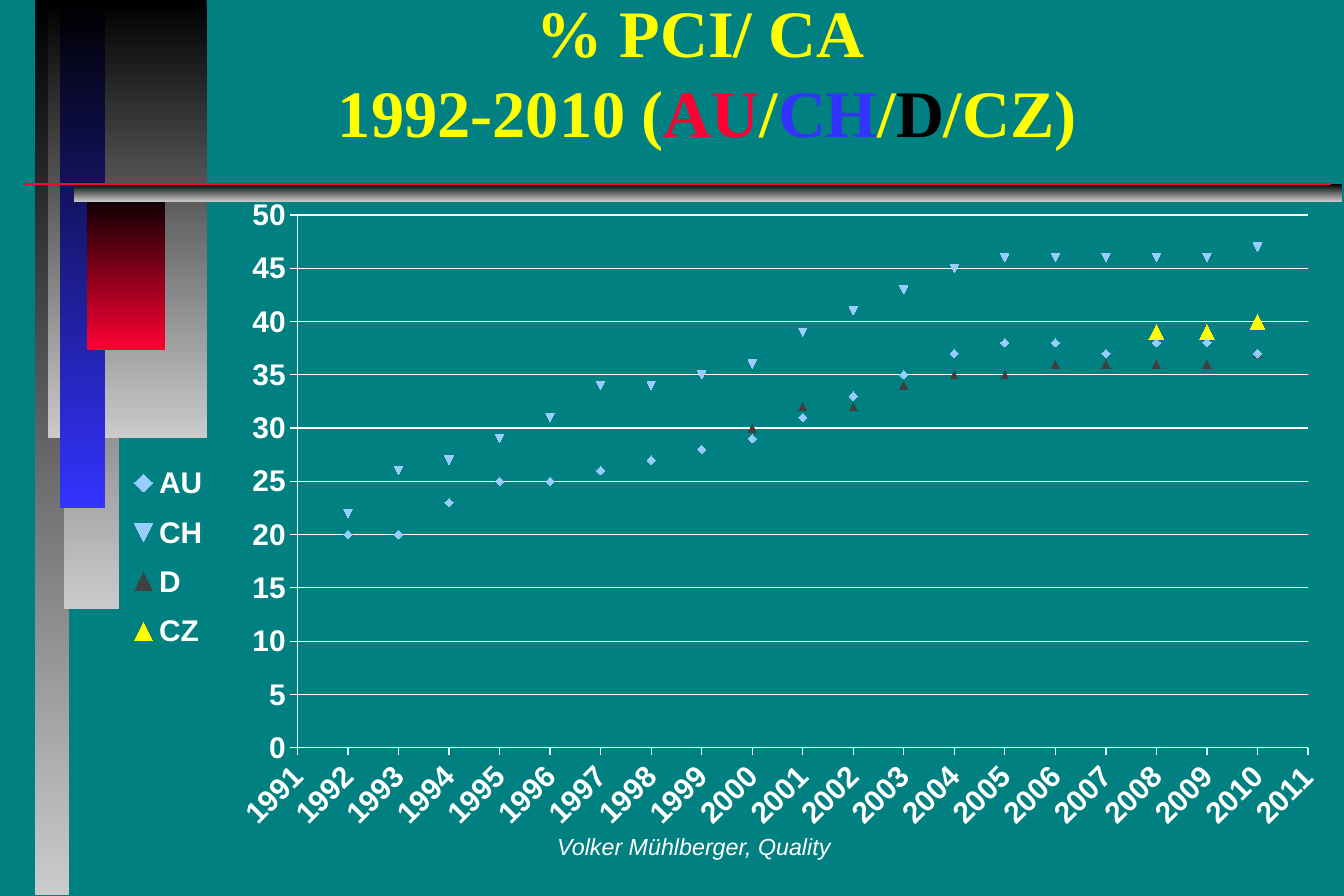
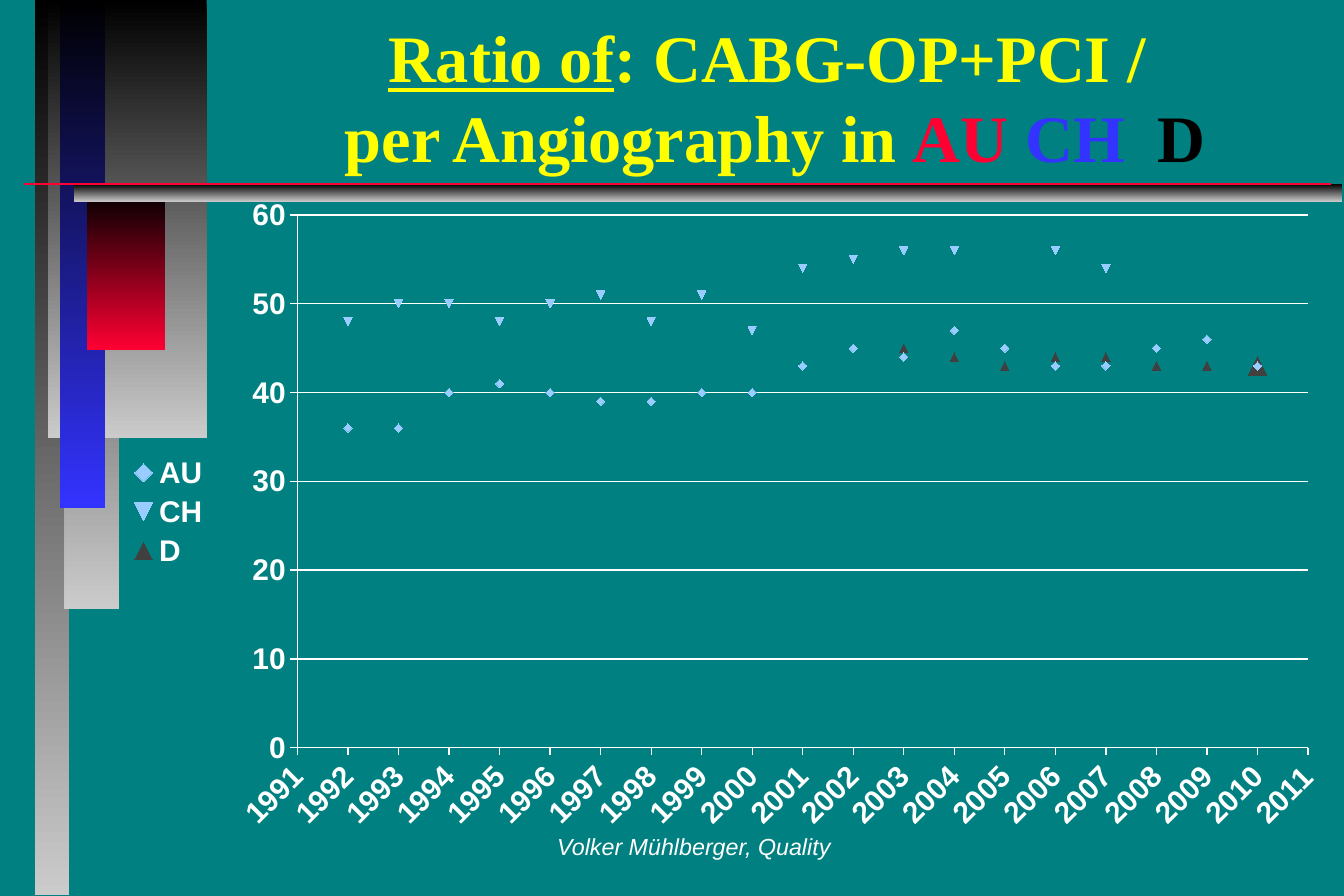
from dataclasses import dataclass

from lxml.etree import SubElement
from pptx import Presentation
from pptx.chart.data import XyChartData
from pptx.dml.color import RGBColor
from pptx.enum.chart import (XL_CHART_TYPE, XL_LEGEND_POSITION,
                             XL_MARKER_STYLE, XL_TICK_MARK)
from pptx.enum.shapes import MSO_CONNECTOR, MSO_SHAPE
from pptx.enum.text import MSO_ANCHOR, PP_ALIGN
from pptx.oxml import parse_xml
from pptx.oxml.ns import nsdecls, qn
from pptx.util import Inches, Pt


@dataclass(frozen=True)
class Theme:
    back: str = "008080"
    dark: str = "000000"
    pale: str = "CBCBCB"
    blue: str = "3333FF"
    red: str = "FF0033"
    gold: str = "FFFF00"
    white: str = "FFFFFF"
    sky: str = "99CCFF"
    gray: str = "404040"
    serif: str = "Times New Roman"
    sans: str = "Arial"
    head: int = 40
    body: int = 18
    foot: int = 14


T = Theme()


def tint(code):
    return RGBColor.from_string(code)


def put(item, **vals):
    for name, val in vals.items():
        setattr(item, name, val)


def clear():
    return parse_xml(f"<c:spPr {nsdecls('c', 'a')}><a:noFill/>"
                     "<a:ln><a:noFill/></a:ln></c:spPr>")


class Deck:
    # Left, top, width, height and end colour of each band, back to front
    BANDS = [
        (0.29, 0, 0.29, 7.49, T.pale),
        (0.54, 0, 0.46, 5.1, T.pale),
        (0.4, 0, 1.33, 3.67, T.pale),
        (0.5, 0, 0.38, 4.25, T.blue),
        (0.73, 1.6, 0.65, 1.33, T.red),
        (0.62, 1.54, 10.61, 0.15, T.pale),
    ]
    CHART = (0.98, 1.55, 10.27, 5.51)

    def __init__(self):
        self.prs = Presentation()
        put(self.prs, slide_width=Inches(11.25), slide_height=Inches(7.5))
        self.slide = None

    def start(self):
        """Add a slide with the shared bands, rule and footer."""
        self.slide = self.prs.slides.add_slide(self.prs.slide_layouts[6])
        fill = self.slide.background.fill
        fill.solid()
        fill.fore_color.rgb = tint(T.back)
        for *box, code in self.BANDS:
            self.band(box, code)
        self.rule(0.2, 11.14, 1.54)
        self.text((4.03, 6.83, 3.56, 0.5),
                  [[("Volker Mühlberger, Quality", T.white, {})]],
                  MSO_ANCHOR.MIDDLE, False,
                  dict(name=T.sans, size=Pt(T.foot), italic=True))

    def band(self, box, code):
        band = self.slide.shapes.add_shape(MSO_SHAPE.RECTANGLE,
                                           *map(Inches, box))
        band.shadow.inherit = False
        band.line.fill.background()
        band.fill.gradient()
        band.fill.gradient_angle = 270
        stops = zip(band.fill.gradient_stops, (0, 1), (T.dark, code))
        for stop, spot, shade in stops:
            stop.position = spot
            stop.color.rgb = tint(shade)

    def rule(self, left, right, top):
        rule = self.slide.shapes.add_connector(
            MSO_CONNECTOR.STRAIGHT, *map(Inches, (left, top, right, top)))
        rule.line.width = Pt(1)
        rule.line.color.rgb = tint(T.red)
        SubElement(rule._element.spPr, qn("a:effectLst"))

    def text(self, box, lines, anchor, wrap, style):
        """Write one centred paragraph; lines hold (words, colour, extras)."""
        frame = self.slide.shapes.add_textbox(*map(Inches, box)).text_frame
        put(frame, word_wrap=wrap, vertical_anchor=anchor)
        para = frame.paragraphs[0]
        para.alignment = PP_ALIGN.CENTER
        for row, line in enumerate(lines):
            if row:
                para.add_line_break()
            for words, code, more in line:
                run = para.add_run()
                run.text = words
                put(run.font, **style, **more)
                run.font.color.rgb = tint(code)

    def title(self, box, lines):
        self.text(box, lines, MSO_ANCHOR.BOTTOM, True,
                  dict(name=T.serif, size=Pt(T.head), bold=True))

    def place(self, parent, index, box, **kind):
        """Fix a chart part at a box in inches from the chart's corner."""
        for old in parent.findall(qn("c:layout")):
            parent.remove(old)
        node = parse_xml(
            f"<c:layout {nsdecls('c')}><c:manualLayout/></c:layout>")
        wide, high = self.CHART[2:]
        sizes = zip("xywh", box, (wide, high, wide, high))
        spots = {tag: part / whole for tag, part, whole in sizes}
        for tag, val in {**kind, "xMode": "edge", "yMode": "edge",
                         **spots}.items():
            SubElement(node[0], qn(f"c:{tag}")).set("val", str(val))
        parent.insert(index, node)

    def chart(self, rows, top, step, deep, large=None):
        """Plot rows of (name, values from 1992, style, size, colours)."""
        data = XyChartData(number_format="0")
        for name, vals, *_ in rows:
            line = data.add_series(name)
            for year, val in enumerate(vals, 1992):
                line.add_data_point(year, val)
        chart = self.slide.shapes.add_chart(
            XL_CHART_TYPE.XY_SCATTER, *map(Inches, self.CHART), data).chart
        put(chart, has_title=False, has_legend=True)
        put(chart.font, name=T.sans, size=Pt(T.body), bold=True)
        chart.font.color.rgb = tint(T.white)
        plot = chart.plots[0]
        plot.vary_by_categories = False

        # Years without a value stay blank
        for spot in list(chart._chartSpace.iter(qn("c:pt"))):
            if spot.find(qn("c:v")).text in (None, "", "None"):
                spot.getparent().remove(spot)

        # Markers
        for line, (name, vals, style, size, code, base) in zip(plot.series,
                                                               rows):
            line.smooth = False
            line.format.fill.solid()
            line.format.fill.fore_color.rgb = tint(base)
            line.format.line.fill.background()
            self.mark(line.marker, style, size, code)
            if large and name == large[0]:
                last = line.points[len(vals) - 1]
                self.mark(last.marker, style, large[1], code)

        # Axes
        across, up = chart.category_axis, chart.value_axis
        scales = ((across, 1991, 2011, 1), (up, 0, top, step))
        for axis, low, high, unit in scales:
            put(axis, minimum_scale=low, maximum_scale=high, major_unit=unit,
                major_tick_mark=XL_TICK_MARK.OUTSIDE,
                minor_tick_mark=XL_TICK_MARK.NONE,
                has_major_gridlines=axis is up)
            put(axis.tick_labels, number_format="0",
                number_format_is_linked=False)
            put(axis.tick_labels.font, size=Pt(T.body), bold=True)
            axis.format.line.color.rgb = tint(T.white)
        grid = up.major_gridlines.format.line
        grid.width = Pt(0.75)
        grid.color.rgb = tint(T.white)
        turn = across._element.find(qn("c:txPr")).find(qn("a:bodyPr"))
        turn.set("rot", "-2700000")
        turn.set("vert", "horz")

        # Legend and plot places
        key = chart.legend
        put(key, position=XL_LEGEND_POSITION.LEFT, include_in_layout=False)
        put(key.font, size=Pt(T.body), bold=True)
        self.place(key._element, 1, (0.07, 2.22, 0.72, deep))
        root = chart._chartSpace.find(qn("c:chart"))
        area = root.find(qn("c:plotArea"))
        self.place(area, 0, (1.51, 0.25, 8.46, 4.46), layoutTarget="inner")
        area.append(clear())
        root.addnext(clear())

    def mark(self, mark, style, size, code):
        put(mark, style=style, size=size)
        mark.format.fill.solid()
        mark.format.fill.fore_color.rgb = tint(code)
        mark.format.line.fill.background()


# Marker style, size, marker colour and series colour of each country
AU = (XL_MARKER_STYLE.DIAMOND, 5, T.sky, T.red)
CH = (XL_MARKER_STYLE.AUTOMATIC, 5, T.sky, T.blue)
D = (XL_MARKER_STYLE.TRIANGLE, 5, T.gray, T.gray)
CZ = (XL_MARKER_STYLE.TRIANGLE, 9, T.gold, T.gold)


def main():
    deck = Deck()
    gap = [None]

    # Share of PCI
    deck.start()
    deck.title((0.94, 0.36, 9.96, 0.95), [
        [("% PCI/ CA ", T.gold, {})],
        [("1992-2010 (", T.gold, {}), ("AU", T.red, {}), ("/", T.gold, {}),
         ("CH", T.blue, {}), ("/", T.gold, {}), ("D", T.dark, {}),
         ("/CZ)", T.gold, {})]])
    deck.chart([
        ("AU", [20, 20, 23, 25, 25, 26, 27, 28, 29, 31, 33, 35, 37, 38, 38,
                37, 38, 38, 37], *AU),
        ("CH", [22, 26, 27, 29, 31, 34, 34, 35, 36, 39, 41, 43, 45, 46, 46,
                46, 46, 46, 47], *CH),
        ("D", gap * 8 + [30, 32, 32, 34, 35, 35, 36, 36, 36, 36, 37], *D),
        ("CZ", gap * 16 + [39, 39, 40], *CZ),
    ], 50, 5, 1.79)

    # Ratio per angiography
    deck.start()
    deck.title((1.73, 0, 9.52, 1.52), [
        [("Ratio of", T.gold, {"underline": True}),
         (": CABG-OP+PCI / ", T.gold, {})],
        [("per Angiography in ", T.gold, {}), ("AU ", T.red, {}),
         ("CH  ", T.blue, {}), ("D", T.dark, {})]])
    deck.chart([
        ("AU", [36, 36, 40, 41, 40, 39, 39, 40, 40, 43, 45, 44, 47, 45, 43,
                43, 45, 46, 43], *AU),
        ("CH", [48, 50, 50, 48, 50, 51, 48, 51, 47, 54, 55, 56, 56, None,
                56, 54] + gap * 3, *CH),
        ("D", gap * 11 + [45, 44, 43, 44, 44, 43, 43, 43], *D),
    ], 60, 10, 1.03, large=("D", 11))

    deck.prs.save("out.pptx")


if __name__ == "__main__":
    main()
